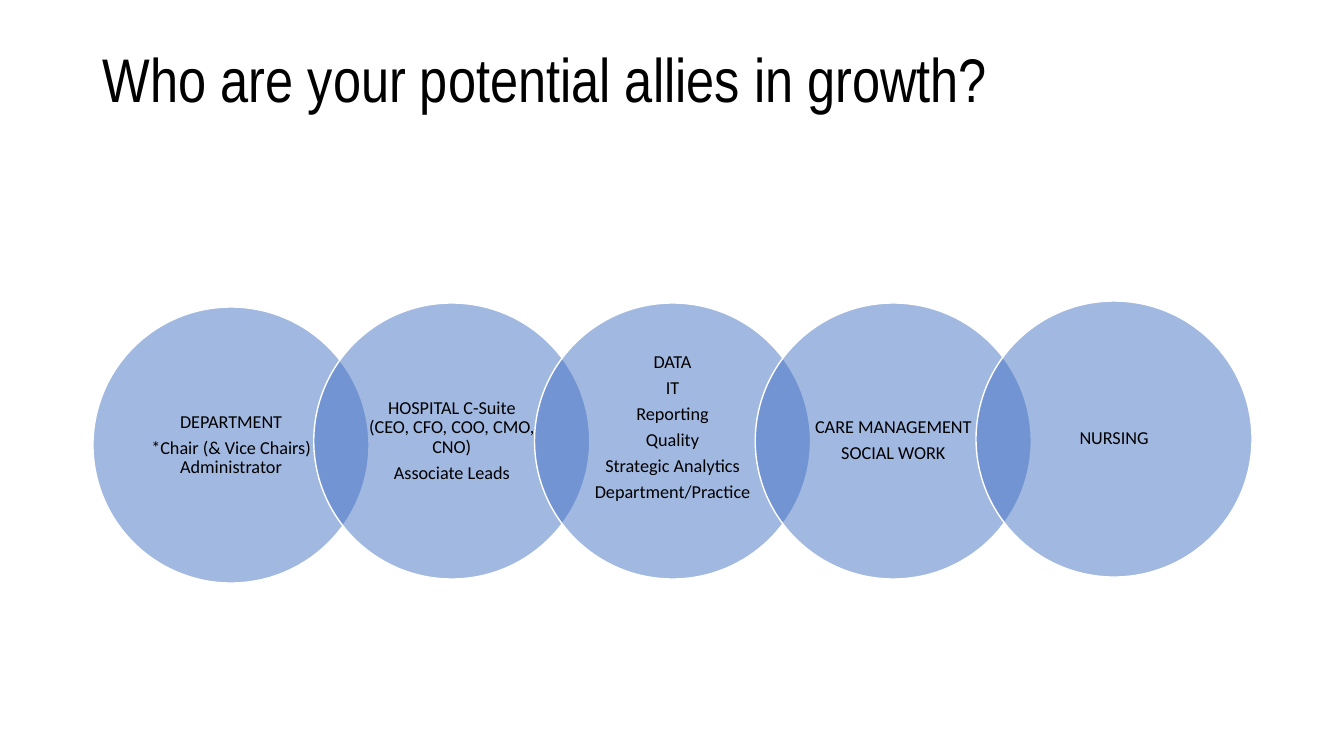
import pptx
import pptx.util
from lxml import etree
from pptx.dml.color import RGBColor
from pptx.enum.shapes import MSO_SHAPE
from pptx.enum.text import MSO_ANCHOR, PP_ALIGN
from pptx.oxml.ns import qn

TITLE = "Who are your potential allies in growth?"
# Top of each circle in px, lift of its text in px, lines of text
ALLIES = [
    (307, 0, ["DEPARTMENT", "*Chair (& Vice Chairs) Administrator"]),
    (303, 0, ["HOSPITAL C-Suite (CEO, CFO, COO, CMO, CNO)", "Associate Leads"]),
    (303, 26, ["DATA", "IT", "Reporting", "Quality", "Strategic Analytics",
               "Department/Practice"]),
    (303, 0, ["CARE MANAGEMENT", "SOCIAL WORK"]),
    (301, 0, ["NURSING"]),
]
COLORS = {"circle": "4472C4", "outline": "FFFFFF", "text": "000000"}

PX_PER_INCH = 100.8
SLIDE_WIDTH, SLIDE_HEIGHT = 1344, 756
FIRST_LEFT, LAST_LEFT = 93, 976
DIAMETER = 276
TEXT_MARGIN = 40


def px(length):
    return pptx.util.Emu(round(length * 914400 / PX_PER_INCH))


def color(name):
    return RGBColor.from_string(COLORS[name])


def add_text(page, area, lines, font, size, anchor, insets, align, gap=0):
    """Area is left, top, width, height; insets are left, top, right, bottom."""
    box = page.shapes.add_textbox(*map(px, area))
    frame = box.text_frame
    frame.word_wrap = True
    frame.vertical_anchor = anchor
    (frame.margin_left, frame.margin_top,
     frame.margin_right, frame.margin_bottom) = map(px, insets)
    frame.text = "\n".join(lines)
    for para in frame.paragraphs:
        para.alignment = align
        para.line_spacing = 0.9
        para.space_after = pptx.util.Pt(gap)
        for span in para.runs:
            span.font.name = font
            span.font.size = pptx.util.Pt(size)
            span.font.color.rgb = color("text")


def add_circle(page, left, top):
    circle = page.shapes.add_shape(
        MSO_SHAPE.OVAL, px(left), px(top), px(DIAMETER), px(DIAMETER))
    circle.shadow.inherit = False
    circle.fill.solid()
    circle.fill.fore_color.rgb = color("circle")
    fill_color = circle.fill._xPr.find(qn("a:solidFill"))[0]
    etree.SubElement(fill_color, qn("a:alpha"), val="50000")
    circle.line.color.rgb = color("outline")
    circle.line.width = pptx.util.Pt(1)


def main():
    deck = pptx.Presentation()
    deck.slide_width, deck.slide_height = px(SLIDE_WIDTH), px(SLIDE_HEIGHT)
    page = deck.slides.add_slide(deck.slide_layouts[6])

    add_text(page, (93, 40, 1159, 146), [TITLE], "Arial Narrow", 44,
             MSO_ANCHOR.TOP, (10, 9, 10, 5), PP_ALIGN.LEFT)

    step = (LAST_LEFT - FIRST_LEFT) / (len(ALLIES) - 1)
    text_side = DIAMETER - 2 * TEXT_MARGIN
    for index, (top, lift, lines) in enumerate(ALLIES):
        left = FIRST_LEFT + index * step
        add_circle(page, left, top)
        area = (left + TEXT_MARGIN, top + TEXT_MARGIN, text_side, text_side)
        add_text(page, area, lines, "Calibri", 13, MSO_ANCHOR.MIDDLE,
                 (15, 2, 15, 2 + lift), PP_ALIGN.CENTER, gap=4.5)

    deck.save("out.pptx")


if __name__ == "__main__":
    main()
